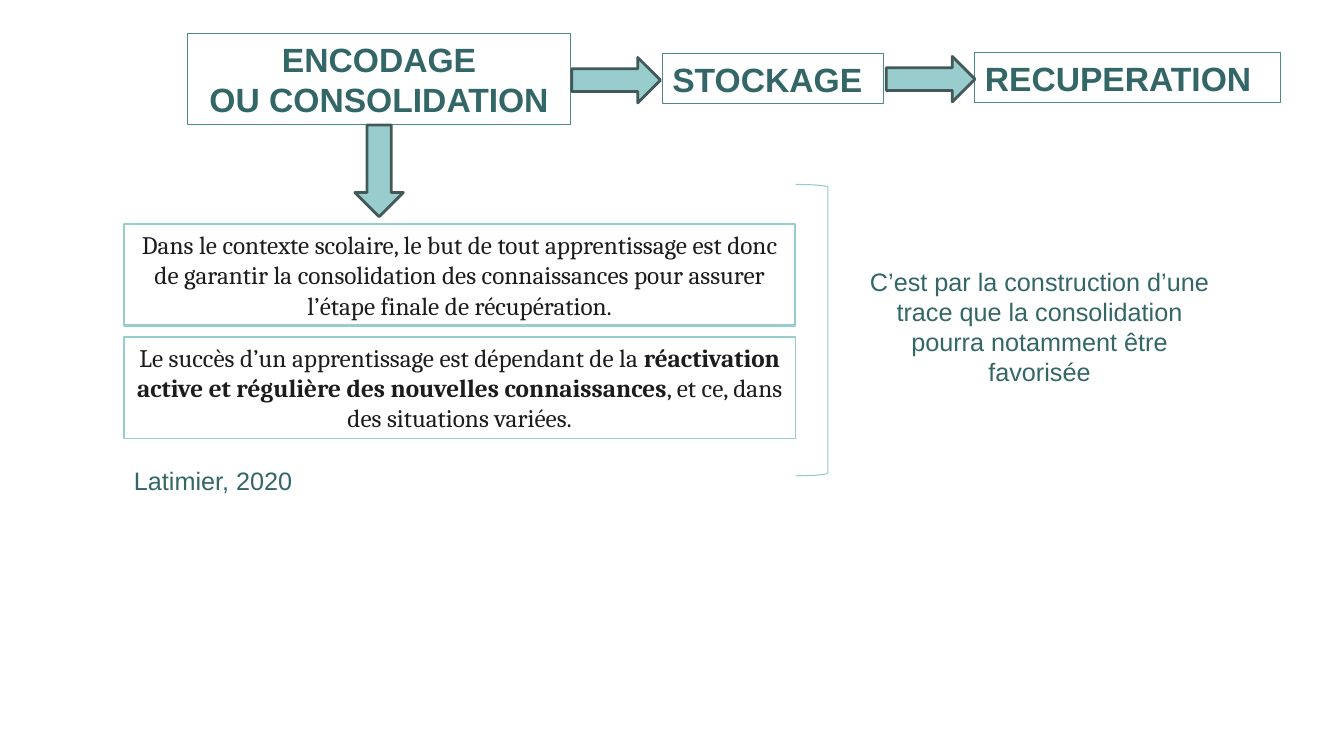
import pptx
import pptx.util
import pptx.dml.color
import pptx.enum.shapes
import pptx.enum.text

WIDE, HIGH = pptx.util.Inches(13.33), pptx.util.Inches(7.5)
COLS, ROWS = 1333, 750
KIND = pptx.enum.shapes.MSO_SHAPE
ALIGN = pptx.enum.text.PP_ALIGN
TITLE = {"name": "Arial", "size": pptx.util.Pt(24), "bold": True}
PLAIN = {"name": "Arial", "size": pptx.util.Pt(18), "bold": False}
QUOTE = {"name": "Cambria", "size": pptx.util.Pt(18), "bold": False}
TEAL, INK, EDGE, PALE = "336666", "1C1C1C", "4C8A8A", "99CCCC"


def tint(code):
    """Turn a hex string into a colour."""
    return pptx.dml.color.RGBColor.from_string(code)


def spot(box, x, y, w, h):
    """Give the slide lengths of a part set in grid units from its box."""
    left, top = box
    col, row = WIDE / COLS, HIGH / ROWS
    return [round(n) for n in
            ((left + x) * col, (top + y) * row, w * col, h * row)]


def draw(slide, kind, place, line, width, fill=None):
    """Add a preset shape with its outline and fill."""
    shape = slide.shapes.add_shape(kind, *place)
    shape.shadow.inherit = False
    shape.line.color.rgb = tint(line)
    shape.line.width = pptx.util.Pt(width)
    if fill:
        shape.fill.solid()
        shape.fill.fore_color.rgb = tint(fill)
    else:
        shape.fill.background()
    return shape


def write(shape, lines, style, color, align=ALIGN.CENTER):
    """Fill a shape with lines, each a list of (text, bold) runs."""
    frame = shape.text_frame
    frame.word_wrap = True
    for i, runs in enumerate(lines):
        para = frame.paragraphs[0] if i == 0 else frame.add_paragraph()
        para.alignment = align
        for text, bold in runs:
            run = para.add_run()
            run.text = text
            for key, value in {**style, "bold": bold}.items():
                setattr(run.font, key, value)
            run.font.color.rgb = tint(color)


def label(slide, place, text, align):
    """Add a plain text box."""
    shape = slide.shapes.add_textbox(*place)
    write(shape, [[(text, False)]], PLAIN, TEAL, align)


def steps(slide, box):
    """Draw the three memory steps and the arrows that leave them."""
    names = [
        (["ENCODAGE", "OU CONSOLIDATION"], (0, 0, 380, 91), ALIGN.CENTER),
        (["STOCKAGE"], (471, 20, 219, 50), ALIGN.LEFT),
        (["RECUPERATION"], (781, 19, 303, 50), ALIGN.LEFT),
    ]
    for lines, place, align in names:
        shape = draw(slide, KIND.RECTANGLE, spot(box, *place), EDGE, 0.75)
        write(shape, [[(line, True)] for line in lines], TITLE, TEAL, align)
    arrows = [
        (KIND.DOWN_ARROW, (166, 91, 48, 91)),
        (KIND.RIGHT_ARROW, (381, 24, 88, 45)),
        (KIND.RIGHT_ARROW, (693, 23, 88, 45)),
    ]
    for kind, place in arrows:
        draw(slide, kind, spot(box, *place), "435959", 2, PALE)


def claims(slide, box):
    """Stack the two framed statements above their source."""
    goal = [("Dans le contexte scolaire, le but de tout apprentissage est "
             "donc de garantir la consolidation des connaissances pour "
             "assurer l’étape finale de récupération.", False)]
    key = [("Le succès d’un apprentissage est dépendant de la ", False),
           ("réactivation active et régulière des nouvelles connaissances",
            True),
           (", et ce, dans des situations variées.", False)]
    for i, (runs, width) in enumerate([(goal, 1.5), (key, 1.25)]):
        place = spot(box, 0, i * 112, 666, 101)
        shape = draw(slide, KIND.RECTANGLE, place, PALE, width)
        write(shape, [runs], QUOTE, INK)
    label(slide, spot(box, 0, 235, 205, 40), "Latimier, 2020", ALIGN.LEFT)


def result(slide, box):
    """Bracket the statements and add the conclusion beside them."""
    draw(slide, KIND.RIGHT_BRACKET, spot(box, 0, 0, 32, 289), "94C9C9", 0.75)
    label(slide, spot(box, 63, 76, 358, 131),
          "C’est par la construction d’une trace que la consolidation "
          "pourra notamment être favorisée", ALIGN.CENTER)


def main():
    """Build and save the slide."""
    deck = pptx.Presentation()
    deck.slide_width, deck.slide_height = WIDE, HIGH
    slide = deck.slides.add_slide(deck.slide_layouts[6])
    steps(slide, (186, 33))
    claims(slide, (123, 222))
    result(slide, (789, 183))
    deck.save("out.pptx")


if __name__ == "__main__":
    main()
